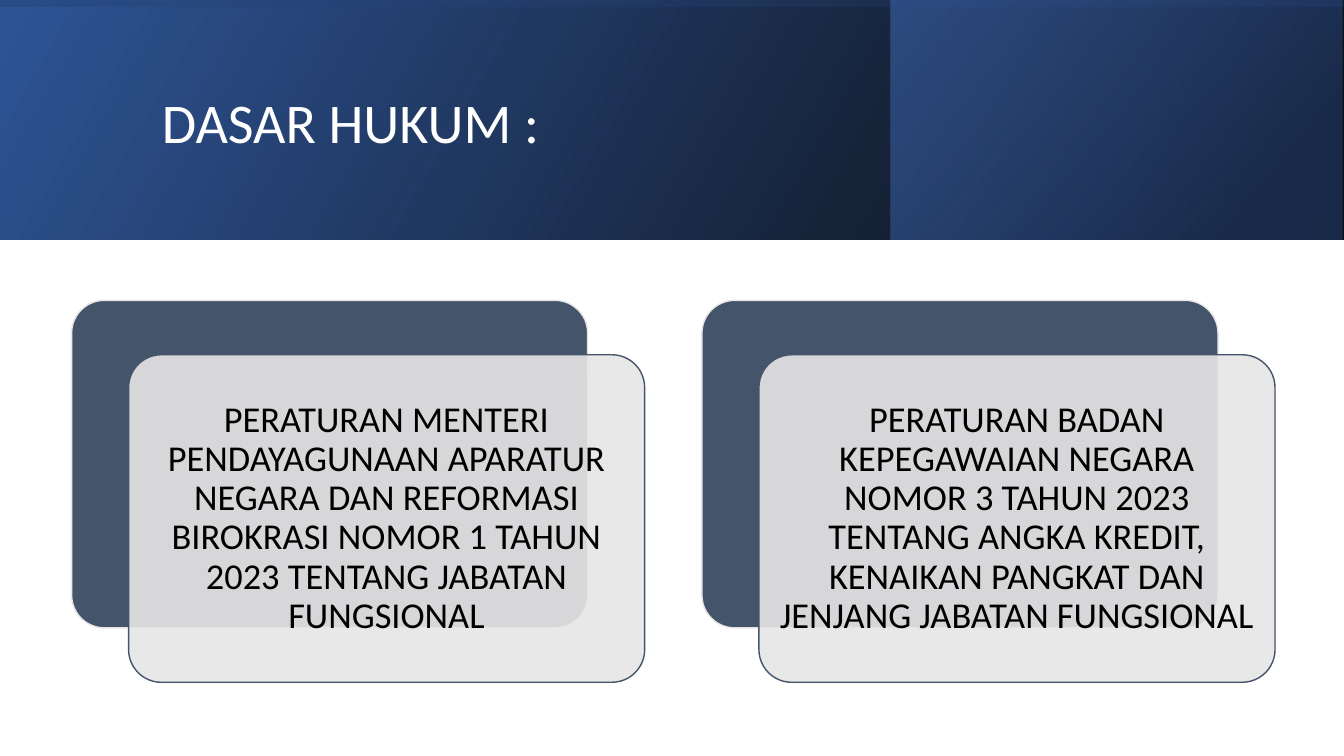
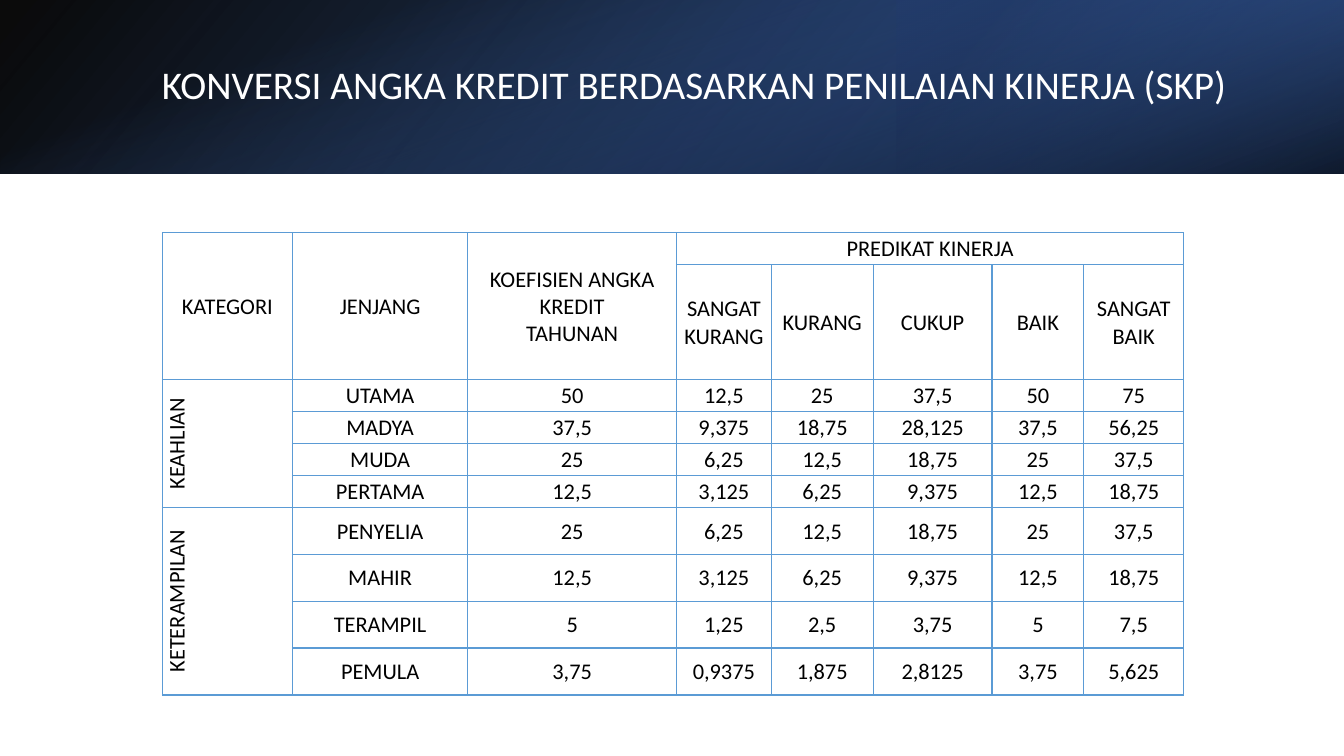
from pptx import Presentation
from pptx.dml.color import RGBColor
from pptx.enum.shapes import MSO_SHAPE
from pptx.enum.text import MSO_ANCHOR, MSO_AUTO_SIZE, PP_ALIGN
from pptx.oxml.ns import qn
from pptx.util import Inches, Pt
from lxml.etree import SubElement

WIDTH, HEIGHT = Inches(13.33), Inches(7.5)
FONT = "Calibri"
BLACK = RGBColor(0x00, 0x00, 0x00)
WHITE = RGBColor(0xFF, 0xFF, 0xFF)
DEEP_BLUE = RGBColor(0x2F, 0x55, 0x97)
NAVY = RGBColor(0x20, 0x38, 0x64)
BLUE = RGBColor(0x44, 0x72, 0xC4)
SLATE = RGBColor(0x44, 0x54, 0x6A)
PALE = RGBColor(0xE7, 0xE6, 0xE6)
GRID_BLUE = RGBColor(0x5B, 0x9B, 0xD5)

REGULATIONS = [
    "PERATURAN MENTERI PENDAYAGUNAAN APARATUR NEGARA DAN REFORMASI "
    "BIROKRASI NOMOR 1 TAHUN 2023 TENTANG JABATAN FUNGSIONAL",
    "PERATURAN BADAN KEPEGAWAIAN NEGARA NOMOR 3 TAHUN 2023 TENTANG "
    "ANGKA KREDIT, KENAIKAN PANGKAT DAN JENJANG JABATAN FUNGSIONAL",
]
HEADINGS = ["KATEGORI", "JENJANG", "KOEFISIEN ANGKA KREDIT\vTAHUNAN"]
RATINGS = {"SANGAT KURANG": 0.25, "KURANG": 0.5, "CUKUP": 0.75,
           "BAIK": 1, "SANGAT BAIK": 1.5}
CATEGORIES = {
    "KEAHLIAN": {"UTAMA": 50, "MADYA": 37.5, "MUDA": 25, "PERTAMA": 12.5},
    "KETERAMPILAN": {"PENYELIA": 25, "MAHIR": 12.5, "TERAMPIL": 5, "PEMULA": 3.75},
}
COLUMN_WIDTHS = [9.68, 13.05, 15.53, 7.05, 7.58, 8.85, 6.83, 7.43]
ROW_HEIGHTS = [4.23, 15.2] + [4.23] * 4 + [6.2] * 4


def across(percent):
    return round(WIDTH * percent / 100)


def down(percent):
    return round(HEIGHT * percent / 100)


def set_alpha(colour, percent):
    SubElement(colour, qn("a:alpha")).set("val", str(percent * 1000))


def style_text(frame, size, colour, align, spacing=None):
    frame.word_wrap = True
    for paragraph in frame.paragraphs:
        paragraph.alignment = align
        paragraph.line_spacing = spacing
        for run in paragraph.runs:
            run.font.name = FONT
            run.font.size = Pt(size)
            run.font.color.rgb = colour


def add_band(slide, height, left, width, stops, angle, rotation=0, flipped=True):
    band_width, band_height = across(width), down(height)
    middle_x, middle_y = across(left) + band_width // 2, band_height // 2
    if rotation % 180:
        band_width, band_height = band_height, band_width
    band = slide.shapes.add_shape(
        MSO_SHAPE.RECTANGLE, middle_x - band_width // 2,
        middle_y - band_height // 2, band_width, band_height)
    band.rotation = rotation
    band.shadow.inherit = False
    band.line.fill.background()
    band.fill.gradient()
    band.fill.gradient_angle = angle
    for stop, (position, colour, _) in zip(band.fill.gradient_stops, stops):
        stop.position = position / 100
        stop.color.rgb = colour
    properties = band.element.spPr
    for colour, (_, _, alpha) in zip(list(properties.iter(qn("a:srgbClr"))), stops):
        set_alpha(colour, alpha)
    if flipped:
        properties.find(qn("a:xfrm")).set("flipH", "1")


def add_titled_slide(deck, text, size, width, height, band_height, bands):
    slide = deck.slides.add_slide(deck.slide_layouts[5])
    for band in bands:
        add_band(slide, band_height, **band)
    title = slide.shapes.title
    title.left, title.top = across(11.3), down(5.07)
    title.width, title.height = across(width), down(height)
    title.text_frame.text = text
    title.text_frame.auto_size = MSO_AUTO_SIZE.NONE
    title.text_frame.vertical_anchor = MSO_ANCHOR.MIDDLE
    style_text(title.text_frame, size, WHITE, PP_ALIGN.LEFT, 0.9)
    title.element.getparent().append(title.element)
    return slide


def add_card(slide, left, top, fill, outline):
    card = slide.shapes.add_shape(
        MSO_SHAPE.ROUNDED_RECTANGLE, across(left), down(top),
        across(38.4), down(43.33))
    card.adjustments[0] = 0.1
    card.shadow.inherit = False
    card.fill.solid()
    card.fill.fore_color.rgb = fill
    card.line.color.rgb = outline
    card.line.width = Pt(1)
    return card


def add_regulation(slide, left, text):
    top = 39.73
    add_card(slide, left, top, SLATE, PALE)
    front = add_card(slide, left + 4.24, top + 7.2, PALE, SLATE)
    set_alpha(front.element.spPr.find(qn("a:solidFill"))[0], 90)
    frame = front.text_frame
    frame.margin_left = frame.margin_right = Inches(0.1)
    frame.margin_top = frame.margin_bottom = Inches(0.1)
    frame.vertical_anchor = MSO_ANCHOR.MIDDLE
    frame.text = text
    style_text(frame, 26, BLACK, PP_ALIGN.CENTER, 0.9)


def add_borders(cell):
    properties = cell._tc.get_or_add_tcPr()
    for index, side in enumerate(("a:lnL", "a:lnR", "a:lnT", "a:lnB")):
        border = properties.makeelement(qn(side), {"w": str(Pt(1))})
        properties.insert(index, border)
        fill = SubElement(border, qn("a:solidFill"))
        SubElement(fill, qn("a:srgbClr")).set("val", str(GRID_BLUE))


def fill_cell(cell, text):
    cell.text_frame.text = text
    cell.vertical_anchor = MSO_ANCHOR.MIDDLE
    cell.margin_left = cell.margin_right = cell.margin_top = Inches(0.01)
    cell.margin_bottom = 0
    style_text(cell.text_frame, 16, BLACK, PP_ALIGN.CENTER)


def decimal_comma(value):
    return f"{value:g}".replace(".", ",")


def credit_rows():
    yield HEADINGS + ["PREDIKAT KINERJA"] + [""] * (len(RATINGS) - 1)
    yield [""] * len(HEADINGS) + list(RATINGS)
    for category, grades in CATEGORIES.items():
        for index, (grade, coefficient) in enumerate(grades.items()):
            credits = [coefficient] + [coefficient * share for share in RATINGS.values()]
            yield [category if index == 0 else "", grade] + [
                decimal_comma(credit) for credit in credits]


def add_credit_table(slide):
    credits = slide.shapes.add_table(
        len(ROW_HEIGHTS), len(COLUMN_WIDTHS), across(12.08), down(30.8),
        across(sum(COLUMN_WIDTHS)), down(sum(ROW_HEIGHTS))).table
    credits.first_row = credits.horz_banding = False
    for column, width in zip(credits.columns, COLUMN_WIDTHS):
        column.width = across(width)
    for row, height, texts in zip(credits.rows, ROW_HEIGHTS, credit_rows()):
        row.height = down(height)
        for cell, text in zip(row.cells, texts):
            fill_cell(cell, text)
            cell.fill.background()
            add_borders(cell)
    for column in range(len(HEADINGS)):
        credits.cell(0, column).merge(credits.cell(1, column))
    credits.cell(0, len(HEADINGS)).merge(credits.cell(0, len(COLUMN_WIDTHS) - 1))
    first = 2
    for grades in CATEGORIES.values():
        category = credits.cell(first, 0)
        category.merge(credits.cell(first + len(grades) - 1, 0))
        category._tc.get_or_add_tcPr().set("vert", "vert270")
        first += len(grades)


def main():
    deck = Presentation()
    deck.slide_width, deck.slide_height = WIDTH, HEIGHT
    base = [(0, BLACK, 96), (100, DEEP_BLUE, 100)]

    legal_bands = [
        dict(left=0, width=100, stops=base, angle=30),
        dict(left=66.3, width=33.6, angle=40,
             stops=[(19, NAVY, 68), (100, BLUE, 48)]),
        dict(left=0, width=100, angle=10, rotation=270,
             stops=[(23, DEEP_BLUE, 16), (99, BLACK, 45)]),
    ]
    legal = add_titled_slide(deck, "DASAR HUKUM :", 40, 79.7, 22.93, 31.7, legal_bands)
    for index, regulation in enumerate(REGULATIONS):
        add_regulation(legal, 5.33 + 46.9 * index, regulation)

    conversion_bands = [
        dict(left=0, width=100, stops=base, angle=220),
        dict(left=66.7, width=33.3, angle=40, rotation=180,
             stops=[(19, NAVY, 68), (100, BLUE, 79)]),
        dict(left=0, width=100, angle=20, rotation=90, flipped=False,
             stops=[(23, BLUE, 0), (99, BLACK, 74)]),
    ]
    conversion = add_titled_slide(
        deck, "KONVERSI ANGKA KREDIT BERDASARKAN PENILAIAN KINERJA (SKP)",
        28, 82.4, 12.8, 23, conversion_bands)
    add_credit_table(conversion)

    deck.save("out.pptx")


if __name__ == "__main__":
    main()
